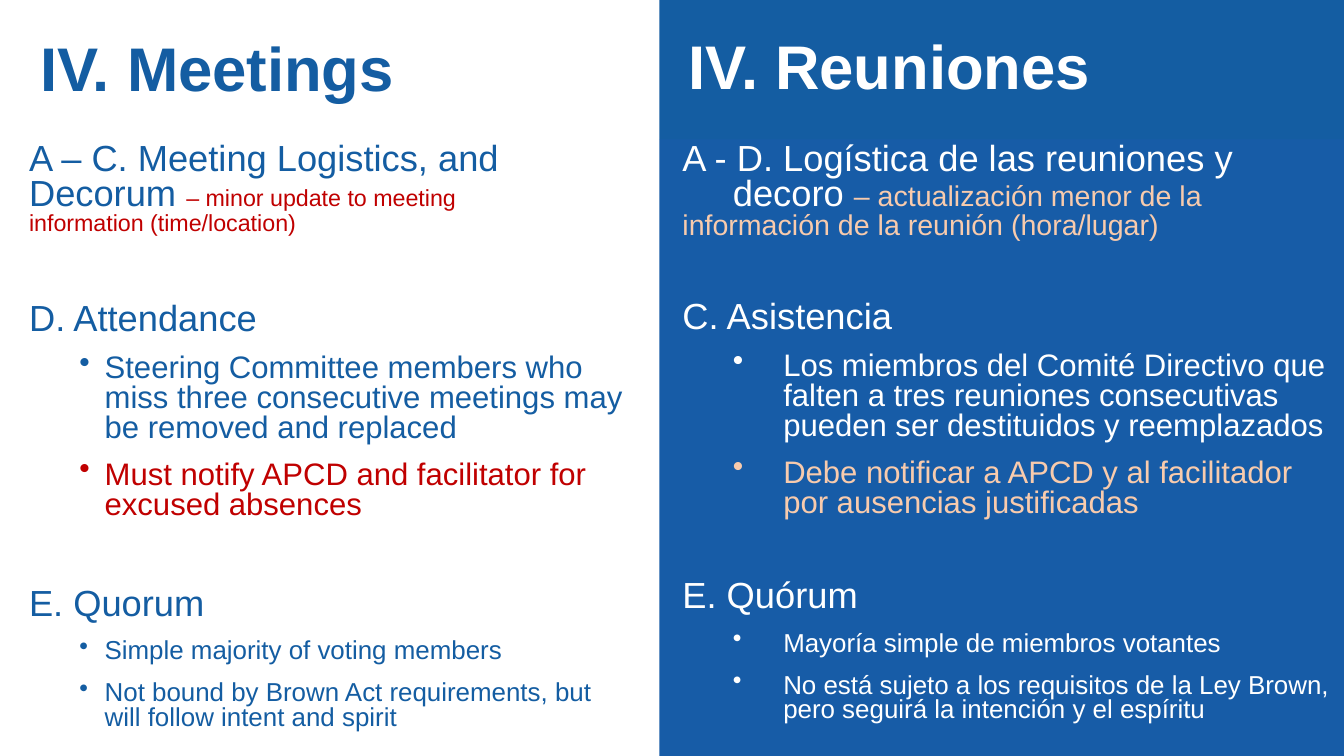
import dataclasses

import pptx
import pptx.dml.color
import pptx.enum.shapes
import pptx.enum.text
import pptx.util
from lxml import etree
from pptx.oxml import ns

Inches = pptx.util.Inches
Pt = pptx.util.Pt
Align = pptx.enum.text.PP_ALIGN
Anchor = pptx.enum.text.MSO_ANCHOR


@dataclasses.dataclass(frozen=True)
class Theme:
    font: str = "Arial"
    blue: str = "145DA2"
    panel: str = "175CA7"
    white: str = "FFFFFF"
    red: str = "C00000"
    peach: str = "F8CBAD"
    title: float = 44
    section: float = 25.9
    point: float = 22.2
    detail: float = 18.5
    note_en: float = 16.6
    note_es: float = 20.4


@dataclasses.dataclass(frozen=True)
class Column:
    ink: str
    accent: str
    note_size: float
    margin: float
    bullet_left: float
    bullet_hang: float


T = Theme()
ENGLISH = Column(T.blue, T.red, T.note_en, 0, 0.75, 0.25)
SPANISH = Column(T.white, T.peach, T.note_es, 0.13, 1.13, 0.5)

MEETINGS = [
    ("A – C. Meeting Logistics, and\nDecorum ",
     "– minor update to meeting\ninformation (time/location)", 6, []),
    ("D. Attendance", "", 42, [
        ("Steering Committee members who miss three consecutive meetings "
         "may be removed and replaced", T.point, False),
        ("Must notify APCD and facilitator for excused absences", T.point, True)]),
    ("E. Quorum", "", 42, [
        ("Simple majority of voting members", T.detail, False),
        ("Not bound by Brown Act requirements, but will follow intent and spirit",
         T.detail, False)]),
]
REUNIONES = [
    ("A - D. Logística de las reuniones y\n\tdecoro ",
     "– actualización menor de la\ninformación de la reunión (hora/lugar)", 6, []),
    ("C. Asistencia", "", 37, [
        ("Los miembros del Comité Directivo que falten a tres reuniones "
         "consecutivas pueden ser destituidos y reemplazados", T.point, False),
        ("Debe notificar a APCD y al facilitador por ausencias justificadas",
         T.point, True)]),
    ("E. Quórum", "", 38, [
        ("Mayoría simple de miembros votantes", T.detail, False),
        ("No está sujeto a los requisitos de la Ley Brown, pero seguirá la "
         "intención y el espíritu", T.detail, False)]),
]


def rgb(value):
    return pptx.dml.color.RGBColor.from_string(value)


def style(font, size, color):
    font.name = T.font
    font.size = Pt(size)
    font.color.rgb = rgb(color)


def indent(p, left, hang=0):
    pPr = p._p.get_or_add_pPr()
    pPr.set("marL", str(Inches(left)))
    pPr.set("indent", str(-Inches(hang)))
    return pPr


def add_text(p, text):
    runs = []
    for i, line in enumerate(text.split("\n")):
        if i:
            p.add_line_break()
        r = p.add_run()
        r.text = line
        runs.append(r)
    return runs


def space(p, before):
    p.alignment = Align.LEFT
    p.line_spacing = 0.8
    p.space_before = Pt(before)
    p.space_after = Pt(6)


def add_panel(s, box, fill):
    sp = s.shapes.add_shape(pptx.enum.shapes.MSO_SHAPE.RECTANGLE,
                            *(Inches(v) for v in box))
    sp.shadow.inherit = False
    sp.fill.solid()
    sp.fill.fore_color.rgb = rgb(fill)
    sp.line.fill.background()
    return sp


def fill_heading(sp, text, color, left=0):
    tf = sp.text_frame
    tf.word_wrap = True
    tf.auto_size = pptx.enum.text.MSO_AUTO_SIZE.NONE
    tf.vertical_anchor = Anchor.MIDDLE
    p = tf.paragraphs[0]
    p.text = text
    p.alignment = Align.LEFT
    p.line_spacing = 0.9
    indent(p, left)
    style(p.font, T.title, color)
    p.font.bold = True


def fill_sections(sp, sections, col):
    tf = sp.text_frame
    tf.word_wrap = True
    tf.vertical_anchor = Anchor.TOP
    for i, (heading, note, before, points) in enumerate(sections):
        p = tf.add_paragraph() if i else tf.paragraphs[0]
        space(p, before)
        indent(p, col.margin)
        style(p.font, T.section, col.ink)
        add_text(p, heading)
        if note:
            for r in add_text(p, note):
                style(r.font, col.note_size, col.accent)
        for text, size, changed in points:
            p = tf.add_paragraph()
            p.level = 1
            space(p, 6)
            p.text = text
            style(p.font, size, col.accent if changed else col.ink)
            pPr = indent(p, col.bullet_left, col.bullet_hang)
            bullet = etree.Element(ns.qn("a:buChar"), char="•")
            pPr.insert_element_before(bullet, "a:tabLst", "a:defRPr", "a:extLst")


def english_half(s, x, y, w, h, head):
    title = s.shapes.title
    title.left, title.top = Inches(x + 0.3), Inches(y + 0.02)
    title.width, title.height = Inches(w - 0.87), Inches(head)
    fill_heading(title, "IV. Meetings", T.blue)
    body = s.shapes.add_textbox(Inches(x + 0.19), Inches(y + head),
                                Inches(w - 0.41), Inches(h - head))
    fill_sections(body, MEETINGS, ENGLISH)


def spanish_half(s, x, y, w, h, head):
    body = add_panel(s, (x, y + head, w, h - head), T.panel)
    fill_sections(body, REUNIONES, SPANISH)
    banner = add_panel(s, (x, y, w, head), T.blue)
    fill_heading(banner, "IV. Reuniones", T.white, 0.19)


def main():
    prs = pptx.Presentation()
    prs.slide_width, prs.slide_height = Inches(13.33), Inches(7.5)
    s = prs.slides.add_slide(prs.slide_layouts[5])
    split, head = 6.54, 1.38
    english_half(s, 0, 0, split, 7.5, head)
    spanish_half(s, split, 0, 13.33 - split, 7.5, head)
    prs.save("out.pptx")


if __name__ == "__main__":
    main()
